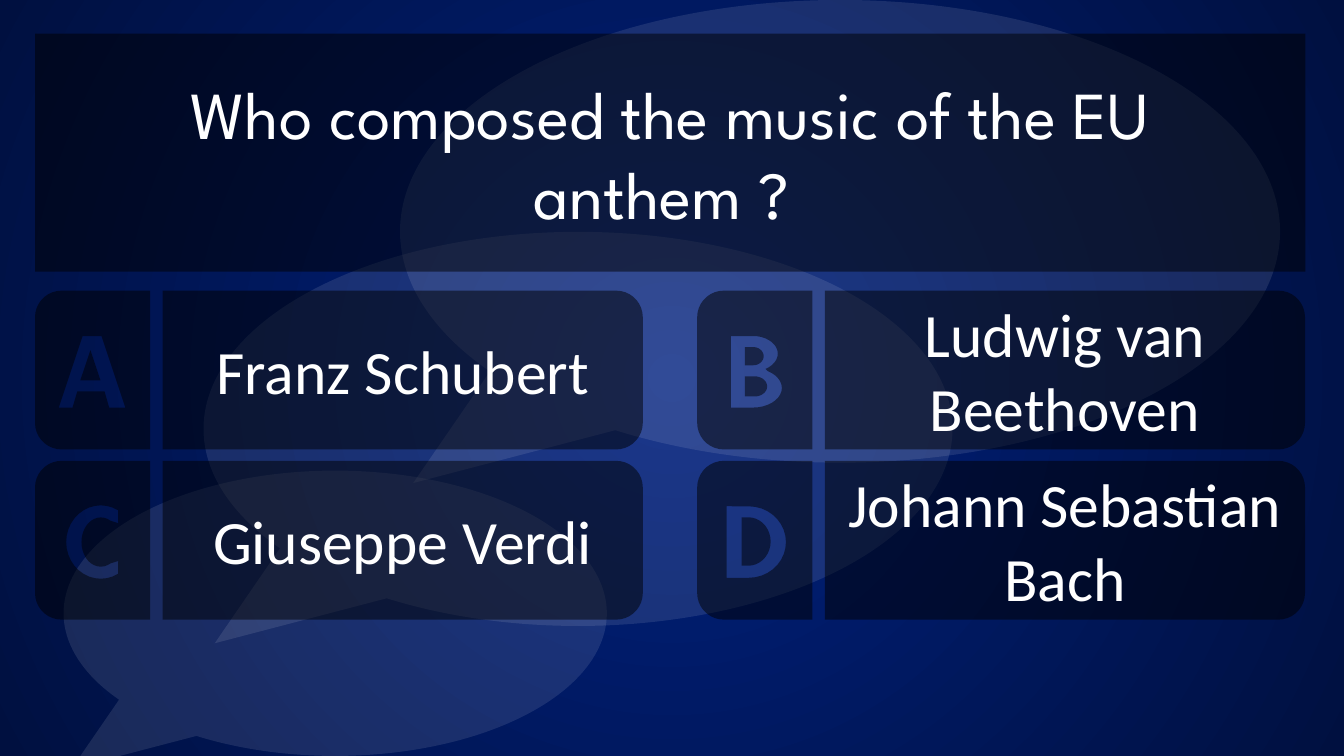
import math

from lxml import etree
from pptx import Presentation
from pptx.dml.color import RGBColor
from pptx.enum import shapes, text
from pptx.oxml.ns import qn
from pptx.util import Pt

WHITE = RGBColor(0xFF, 0xFF, 0xFF)
BLACK = RGBColor(0x00, 0x00, 0x00)
GLOW = RGBColor(0x00, 0x21, 0x7F)
NIGHT = RGBColor(0x00, 0x10, 0x40)

LEFT, COLUMN_STEP = 25, 473
TOP, ROW_STEP = 207.6, 121.6
LETTER_WIDTH, ANSWER_WIDTH, TILE_HEIGHT = 82.3, 343, 113.4
ANSWER_OFFSET = 91.2
RADIUS = 19
CAP, BASE = 32.4, 83.5


def arc(x, y, rx, ry, start, end):
    """Points on an ellipse from one angle to another, clockwise when rising."""
    steps = abs(end - start) // 10
    angles = [math.radians(start + (end - start) * i / steps) for i in range(steps + 1)]
    return [(x + rx * math.cos(a), y + ry * math.sin(a)) for a in angles]


def tint(shape, colour, opacity):
    shape.shadow.inherit = False
    shape.line.fill.background()
    shape.fill.solid()
    shape.fill.fore_color.rgb = colour
    solid = shape._element.spPr.find(qn("a:solidFill"))
    etree.SubElement(solid[0], qn("a:alpha"), val=str(opacity * 1000))


# Letter contours in points, measured from the corner of their tile
letters = [
    [
        [(34, CAP), (47.5, CAP), (64.5, BASE), (53, BASE),
         (49.7, 72), (30.2, 72), (26.8, BASE), (17, BASE)],
        [(39.6, 42.5), (46.8, 64), (32.4, 64)],
    ],
    [
        [(24, CAP), *arc(40, 45, 17.6, 12.6, -90, 60),
         *arc(40, 69.5, 20.5, 14, -60, 90), (24, BASE)],
        [(34, 40.3), *arc(40, 46.8, 7.5, 6.5, -90, 90), (34, 53.3)],
        [(34, 61.2), *arc(41, 68.4, 9, 7.2, -90, 90), (34, 75.6)],
    ],
    [
        [*arc(47, 58, 24.7, 26.2, -60, -300), (59.5, 71.5),
         *arc(47, 58, 13.8, 17.6, -300, -60), (59.5, 44.5)],
    ],
    [
        [(21, CAP), *arc(37, 58, 26.4, 25.5, -90, 90), (21, BASE)],
        [(31.7, 40.3), *arc(36.5, 57.6, 16, 17.3, -90, 90), (31.7, 74.9)],
    ],
]
answers = ["Franz Schubert", "Ludwig van Beethoven", "Giuseppe Verdi", "Johann Sebastian Bach"]

prs = Presentation()
prs.slide_width, prs.slide_height = Pt(960), Pt(540)
slide = prs.slides.add_slide(prs.slide_layouts[5])

backdrop = slide.background.fill
backdrop.gradient()
for stop, colour in zip(backdrop.gradient_stops, (GLOW, NIGHT)):
    stop.color.rgb = colour
gradient = slide._element.find(".//" + qn("a:gradFill"))
gradient.remove(gradient.find(qn("a:lin")))
radial = etree.SubElement(gradient, qn("a:path"), path="circle")
etree.SubElement(radial, qn("a:fillToRect"), {side: "50000" for side in "ltrb"})

bubbles = [(45.4, 336.2, 388.1, 203.8), (145.4, 165.6, 535, 281.5), (285.8, 0, 628.6, 330.5)]
for box in bubbles:
    bubble = slide.shapes.add_shape(shapes.MSO_SHAPE.OVAL_CALLOUT, *map(Pt, box))
    bubble.adjustments[0], bubble.adjustments[1] = -0.485, 0.544
    tint(bubble, WHITE, 10)

rounded_side = [*arc(RADIUS, RADIUS, RADIUS, RADIUS, 270, 180),
                *arc(RADIUS, TILE_HEIGHT - RADIUS, RADIUS, RADIUS, 180, 90)]
letter_outline = rounded_side + [(LETTER_WIDTH, TILE_HEIGHT), (LETTER_WIDTH, 0)]
answer_outline = [(ANSWER_WIDTH - x, y) for x, y in rounded_side] + [(0, TILE_HEIGHT), (0, 0)]

for index, (letter, answer) in enumerate(zip(letters, answers)):
    row, column = divmod(index, 2)
    left, top = LEFT + column * COLUMN_STEP, TOP + row * ROW_STEP
    for offset, contours in ((0, [letter_outline, *letter]), (ANSWER_OFFSET, [answer_outline])):
        placed = [[(Pt(left + offset + x), Pt(top + y)) for x, y in contour]
                  for contour in contours]
        builder = slide.shapes.build_freeform(*placed[0][0])
        builder.add_line_segments(placed[0][1:])
        for hole in placed[1:]:
            builder.move_to(*hole[0])
            builder.add_line_segments(hole[1:])
        tile = builder.convert_to_shape()
        tint(tile, BLACK, 50)
    # The answer tile is the last one drawn in each pair
    answer_frame = tile.text_frame
    answer_frame.word_wrap = True
    answer_frame.vertical_anchor = text.MSO_ANCHOR.MIDDLE
    paragraph = answer_frame.paragraphs[0]
    paragraph.text = answer
    paragraph.alignment = text.PP_ALIGN.CENTER
    paragraph.font.name, paragraph.font.size = "Calibri", Pt(44)
    paragraph.font.color.rgb = WHITE

question = slide.shapes.title
question.left, question.top, question.width, question.height = map(Pt, (LEFT, 24, 907.4, 170))
rounding = etree.SubElement(question._element.spPr, qn("a:prstGeom"), prst="roundRect")
etree.SubElement(rounding, qn("a:avLst"))
tint(question, BLACK, 50)
slide.shapes._spTree.append(question._element)
question_frame = question.text_frame
question_frame.text = "Who composed the music of the EU anthem ? "
question_frame.word_wrap = True
question_frame.auto_size = text.MSO_AUTO_SIZE.NONE
question_frame.vertical_anchor = text.MSO_ANCHOR.MIDDLE
question_frame.margin_left = question_frame.margin_right = Pt(16)
paragraph = question_frame.paragraphs[0]
paragraph.alignment = text.PP_ALIGN.CENTER
paragraph.font.name, paragraph.font.size = "League Spartan", Pt(48)
paragraph.font.color.rgb = WHITE

prs.save("out.pptx")
